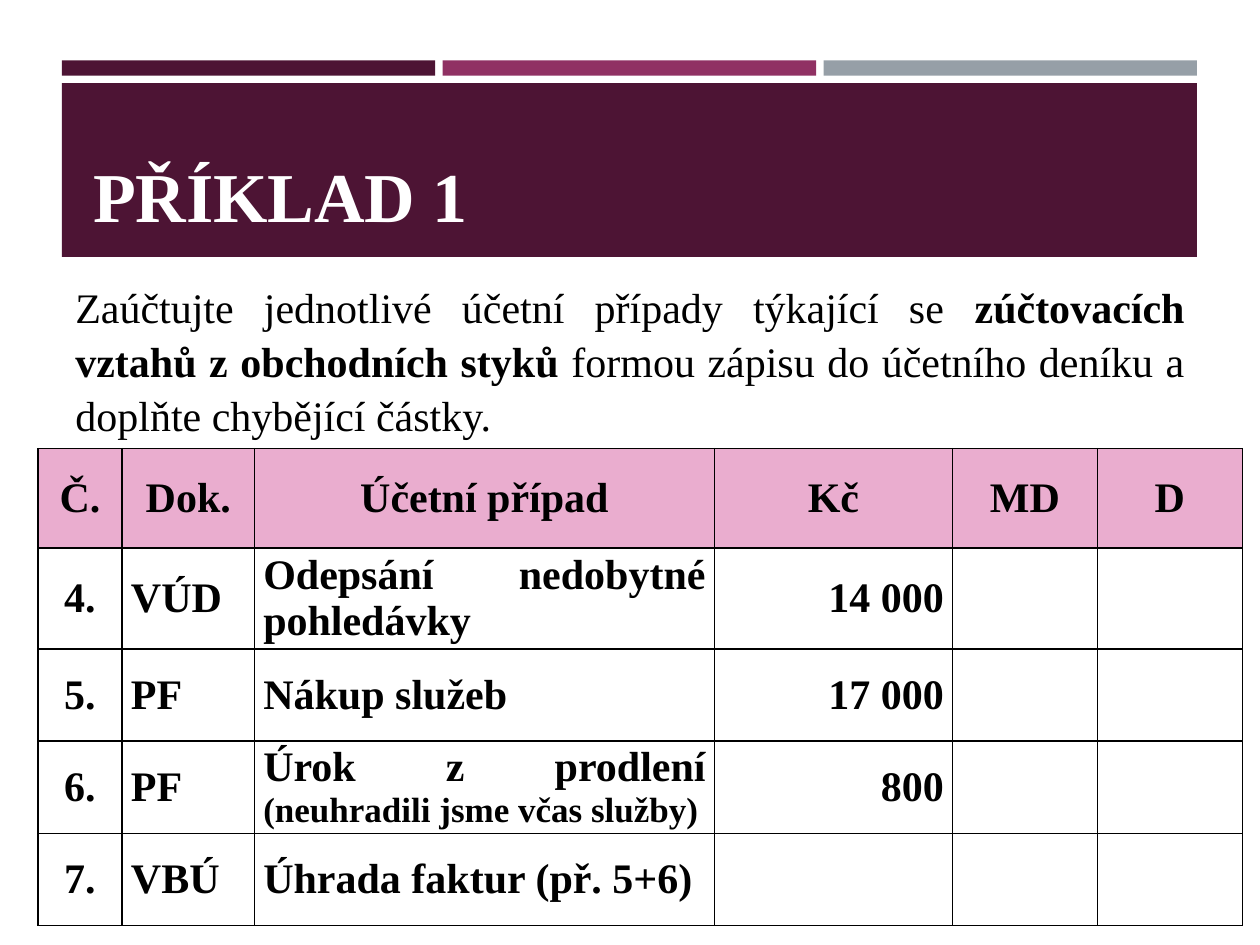
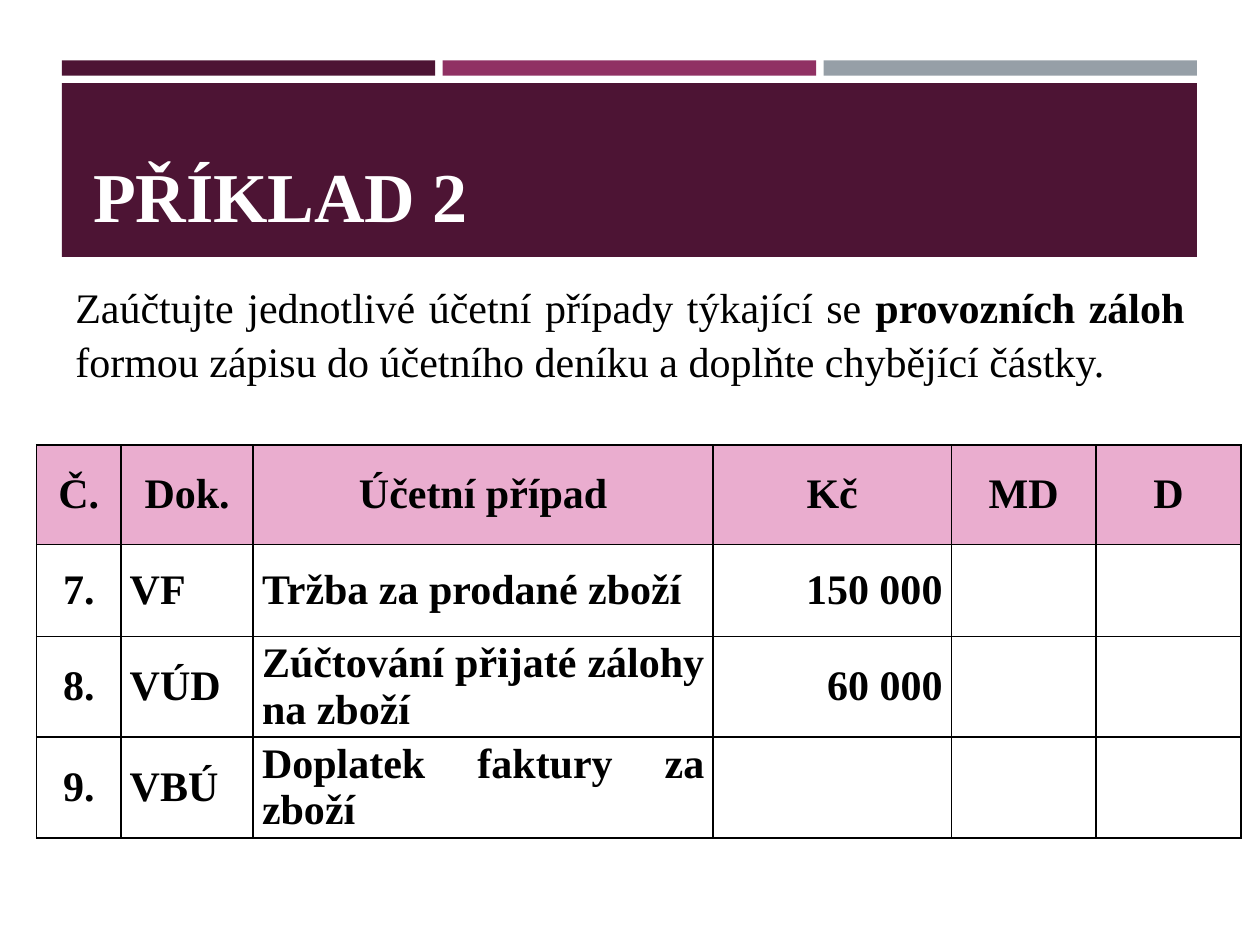
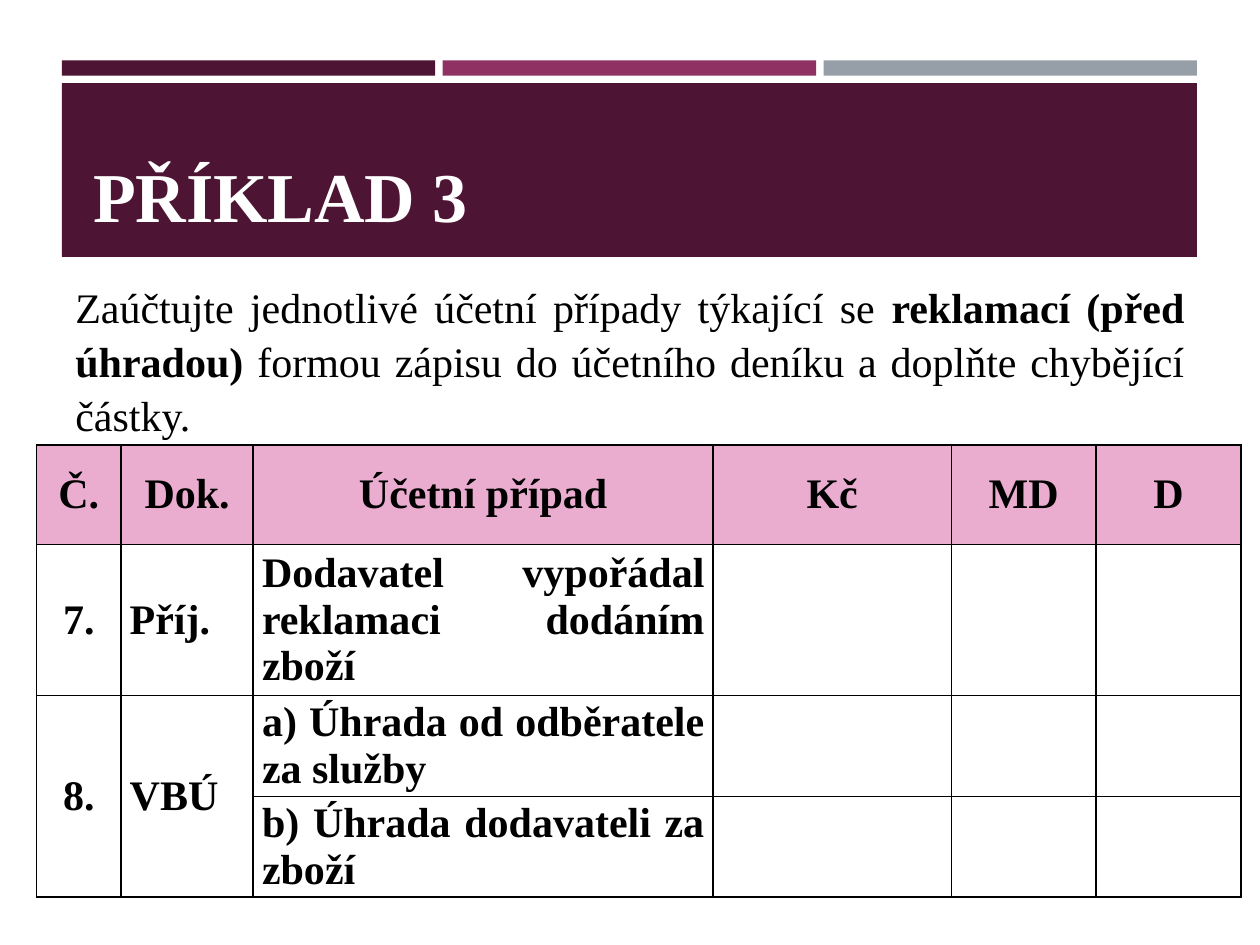
import pptx
import pptx.util
import pptx.dml.color
import pptx.enum.shapes
import pptx.enum.text
import pptx.oxml
from pptx.oxml import ns

Inches, Pt = pptx.util.Inches, pptx.util.Pt
RGB = pptx.dml.color.RGBColor
ALIGN = pptx.enum.text.PP_ALIGN
ANCHOR = pptx.enum.text.MSO_ANCHOR
RECT = pptx.enum.shapes.MSO_SHAPE.RECTANGLE

PLUM = RGB(0x4D, 0x14, 0x34)
BERRY = RGB(0x90, 0x31, 0x63)
GREY = RGB(0x96, 0x9F, 0xA7)
PINK = RGB(0xEA, 0xAD, 0xCF)
WHITE = RGB(0xFF, 0xFF, 0xFF)
BLACK = RGB(0, 0, 0)
FONT = "Times New Roman"

LEFT, WIDTH, GAP = 0.49, 9.01, 0.06
BARS = [PLUM, BERRY, GREY]
COLS = [0.67, 1.05, 3.65, 1.89, 1.15, 1.15]
ALIGNS = [ALIGN.CENTER, ALIGN.LEFT, ALIGN.JUSTIFY, ALIGN.RIGHT, ALIGN.CENTER, ALIGN.CENTER]
HEAD = ["Č.", "Dok.", "Účetní případ", "Kč", "MD", "D"]
HEAD_ROW = 0.79
ROW = {1: 0.73, 2: 0.8, 3: 1.2}

INTRO = "Zaúčtujte jednotlivé účetní případy týkající se "
TASK = "formou zápisu do účetního deníku a doplňte chybějící částky."

SLIDES = [
    {"title": "PŘÍKLAD 1", "topic": "zúčtovacích vztahů z obchodních styků ",
     "size": (9, 1.31), "at": (0.3, 3.56), "lines": [2, 1, 1, 1],
     "rows": [["4.", "VÚD", "Odepsání nedobytné pohledávky", "14 000"],
              ["5.", "PF", "Nákup služeb", "17 000"],
              ["6.", "PF", ("Úrok z prodlení ", "(neuhradili jsme včas služby)"), "800"],
              ["7.", "VBÚ", "Úhrada faktur (př. 5+6)"]]},
    {"title": "PŘÍKLAD 2", "topic": "provozních záloh ",
     "size": (9, 0.91), "at": (0.29, 3.53), "lines": [1, 2, 2],
     "rows": [["7.", "VF", "Tržba za prodané zboží", "150 000"],
              ["8.", "VÚD", "Zúčtování přijaté zálohy na zboží", "60 000"],
              ["9.", "VBÚ", "Doplatek faktury za zboží"]]},
    {"title": "PŘÍKLAD 3", "topic": "reklamací (před úhradou) ",
     "size": (9, 1.31), "at": (0.29, 3.53), "lines": [3, 2, 2],
     "rows": [["7.", "Příj.", "Dodavatel vypořádal reklamaci dodáním zboží"],
              ["8.", "VBÚ", "a) Úhrada od odběratele za služby"],
              [None, None, "b) Úhrada dodavateli za zboží"]]},
]


def style(para, size, color, bold=None, align=None):
    font = para.font
    font.name, font.size, font.bold = FONT, Pt(size), bold
    font.color.rgb = color
    para.alignment = align


def add_bar(slide, x, y, w, h, color):
    bar = slide.shapes.add_shape(RECT, *map(Inches, (x, y, w, h)))
    bar.shadow.inherit = False
    bar.fill.solid()
    bar.fill.fore_color.rgb = color
    bar.line.fill.background()


def add_text(slide, x, y, w, h, anchor):
    frame = slide.shapes.add_textbox(*map(Inches, (x, y, w, h))).text_frame
    frame.word_wrap = True
    frame.vertical_anchor = anchor
    return frame.paragraphs[0]


def add_band(slide, title):
    wide = (WIDTH - GAP * (len(BARS) - 1)) / len(BARS)
    for i, color in enumerate(BARS):
        add_bar(slide, LEFT + i * (wide + GAP), 0.48, wide, 0.12, color)
    add_bar(slide, LEFT, 0.66, WIDTH, 1.38, PLUM)
    para = add_text(slide, 0.64, 0.75, 8.74, 1.18, ANCHOR.BOTTOM)
    para.text = title
    style(para, 40, WHITE, True)


def add_task(slide, topic, size):
    para = add_text(slide, 0.5, 2.15, *size, ANCHOR.TOP)
    style(para, 24, BLACK, align=ALIGN.JUSTIFY)
    para.line_spacing = 1.08
    for text, bold in ((INTRO, False), (topic, True), (TASK, False)):
        run = para.add_run()
        run.text, run.font.bold = text, bold


def add_edges(cell):
    props = cell._tc.get_or_add_tcPr()
    for i, side in enumerate(("lnL", "lnR", "lnT", "lnB")):
        props.insert(i, pptx.oxml.parse_xml(
            f'<a:{side} {ns.nsdecls("a")} w="12700"><a:solidFill>'
            f'<a:srgbClr val="{BLACK}"/></a:solidFill></a:{side}>'))


def fill_cell(cell, text, align, head):
    cell.margin_left = cell.margin_right = Inches(0.07)
    cell.margin_top = cell.margin_bottom = 0
    cell.vertical_anchor = ANCHOR.MIDDLE
    if head:
        cell.fill.solid()
        cell.fill.fore_color.rgb = PINK
    else:
        cell.fill.background()
    add_edges(cell)
    para = cell.text_frame.paragraphs[0]
    style(para, 24, BLACK, True, align)
    main, *notes = text if isinstance(text, tuple) else (text,)
    if main:
        para.add_run().text = main
    for note in notes:
        run = para.add_run()
        run.text, run.font.size = note, Pt(20)


def add_grid(slide, at, rows, lines):
    highs = [HEAD_ROW] + [ROW[n] for n in lines]
    box = (*at, sum(COLS), sum(highs))
    table = slide.shapes.add_table(len(highs), len(COLS), *map(Inches, box)).table
    table.first_row = table.horz_banding = False
    for col, wide in zip(table.columns, COLS):
        col.width = Inches(wide)
    for r, row in enumerate([HEAD] + rows):
        table.rows[r].height = Inches(highs[r])
        cells = row + [""] * (len(COLS) - len(row))
        for c, text in enumerate(cells):
            align = ALIGNS[c] if r else ALIGN.CENTER
            fill_cell(table.cell(r, c), text, align, r == 0)
            if text is None:
                table.cell(r - 1, c).merge(table.cell(r, c))


def main():
    deck = pptx.Presentation()
    deck.slide_width, deck.slide_height = Inches(10), Inches(7.5)
    for item in SLIDES:
        slide = deck.slides.add_slide(deck.slide_layouts[6])
        add_band(slide, item["title"])
        add_task(slide, item["topic"], item["size"])
        add_grid(slide, item["at"], item["rows"], item["lines"])
    deck.save("out.pptx")


if __name__ == "__main__":
    main()
